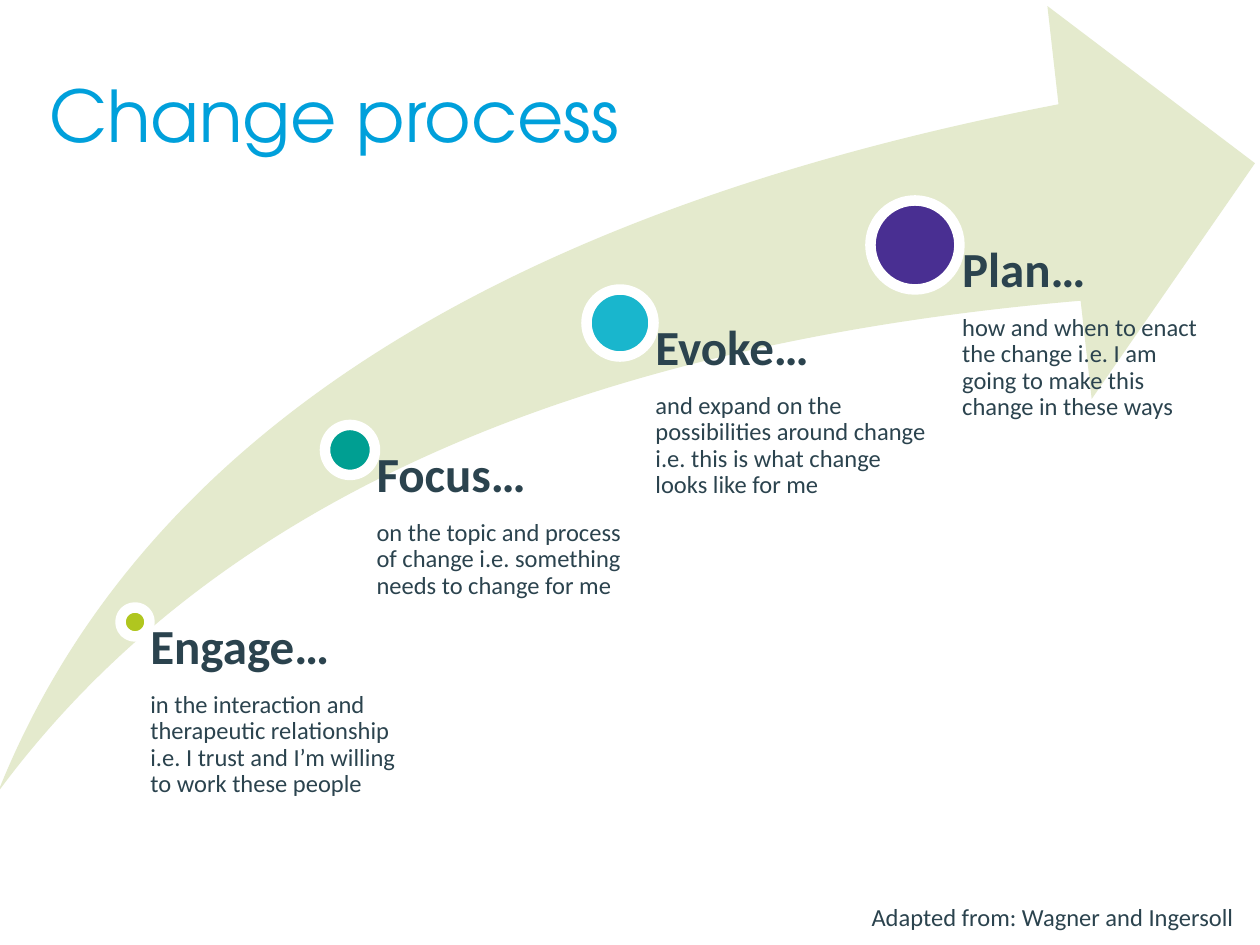
from pptx import Presentation
from pptx.dml.color import RGBColor
from pptx.enum.shapes import MSO_SHAPE
from pptx.enum.text import MSO_ANCHOR, MSO_AUTO_SIZE, PP_ALIGN
from pptx.util import Emu, Pt

PIXELS_PER_INCH = 126
SWOOSH = RGBColor(0xE4, 0xEA, 0xCD)
TITLE = RGBColor(0x00, 0xA0, 0xDB)
TEXT = RGBColor(0x2B, 0x43, 0x4E)
WHITE = RGBColor(0xFF, 0xFF, 0xFF)
LIME = RGBColor(0xB0, 0xC6, 0x1F)
TEAL = RGBColor(0x00, 0x9F, 0x92)
CYAN = RGBColor(0x19, 0xB6, 0xCD)
PURPLE = RGBColor(0x49, 0x2F, 0x92)

STAGES_BOTTOM = 810
STAGES = [
    ((135, 622), 29, 261, LIME, "Engage…",
     "in the interaction and therapeutic relationship i.e. I trust and I’m willing to work these people"),
    ((350, 450), 50, 285, TEAL, "Focus…",
     "on the topic and process of change i.e. something needs to change for me"),
    ((620, 323), 67, 312, CYAN, "Evoke…",
     "and expand on the possibilities around change i.e. this is what change looks like for me"),
    ((915, 245), 89, 295, PURPLE, "Plan…",
     "how and when to enact the change i.e. I am going to make this change in these ways"),
]


def px(length):
    return Emu(round(length * 914400 / PIXELS_PER_INCH))


def place(box):
    return [px(length) for length in box]


def format_font(paragraph, size, color, name="Calibri", bold=False):
    for run in paragraph.runs:
        run.font.name = name
        run.font.size = Pt(size)
        run.font.bold = bold
        run.font.color.rgb = color


def add_swoosh(slide, box):
    swoosh = slide.shapes.add_shape(MSO_SHAPE.SWOOSH_ARROW, *place(box))
    swoosh.adjustments[0] = 0.25
    swoosh.adjustments[1] = 0.25
    swoosh.shadow.inherit = False
    swoosh.fill.solid()
    swoosh.fill.fore_color.rgb = SWOOSH
    swoosh.line.fill.background()


def add_stage(slide, center, diameter, width, color, heading, description):
    left, top = center
    radius = diameter / 2
    circle = slide.shapes.add_shape(
        MSO_SHAPE.OVAL, *place((left - radius, top - radius, diameter, diameter)))
    circle.shadow.inherit = False
    circle.fill.solid()
    circle.fill.fore_color.rgb = color
    circle.line.color.rgb = WHITE
    circle.line.width = Pt(6)

    text_box = slide.shapes.add_textbox(*place((left, top, width, STAGES_BOTTOM - top)))
    text_frame = text_box.text_frame
    text_frame.word_wrap = True
    text_frame.margin_left = px(diameter * 0.53)
    text_frame.margin_top = text_frame.margin_right = text_frame.margin_bottom = 0
    text_frame.text = f"{heading}\n{description}"
    for paragraph, size, bold in zip(text_frame.paragraphs, (28, 14), (True, False)):
        paragraph.line_spacing = 0.9
        paragraph.space_after = Pt(size * 0.35)
        format_font(paragraph, size, TEXT, bold=bold)


def add_title(slide, box):
    title = slide.shapes.title
    title.left, title.top, title.width, title.height = place(box)
    text_frame = title.text_frame
    text_frame.text = "Change process"
    text_frame.word_wrap = True
    text_frame.auto_size = MSO_AUTO_SIZE.NONE
    text_frame.vertical_anchor = MSO_ANCHOR.TOP
    paragraph = text_frame.paragraphs[0]
    paragraph.alignment = PP_ALIGN.CENTER
    format_font(paragraph, 40.7, TITLE, "TeX Gyre Adventor")


def add_credit(slide, box):
    text_frame = slide.shapes.add_textbox(*place(box)).text_frame
    text_frame.word_wrap = True
    text_frame.text = "Adapted from: Wagner and Ingersoll"
    paragraph = text_frame.paragraphs[0]
    paragraph.alignment = PP_ALIGN.RIGHT
    format_font(paragraph, 14, TEXT)


def main():
    presentation = Presentation()
    presentation.slide_width = px(1260)
    presentation.slide_height = px(945)
    slide = presentation.slides.add_slide(presentation.slide_layouts[5])
    add_swoosh(slide, (-2, 6, 1257, 786))
    for stage in STAGES:
        add_stage(slide, *stage)
    add_title(slide, (29, 65, 610, 158))
    add_credit(slide, (512, 896, 734, 43))
    presentation.save("out.pptx")


if __name__ == "__main__":
    main()
